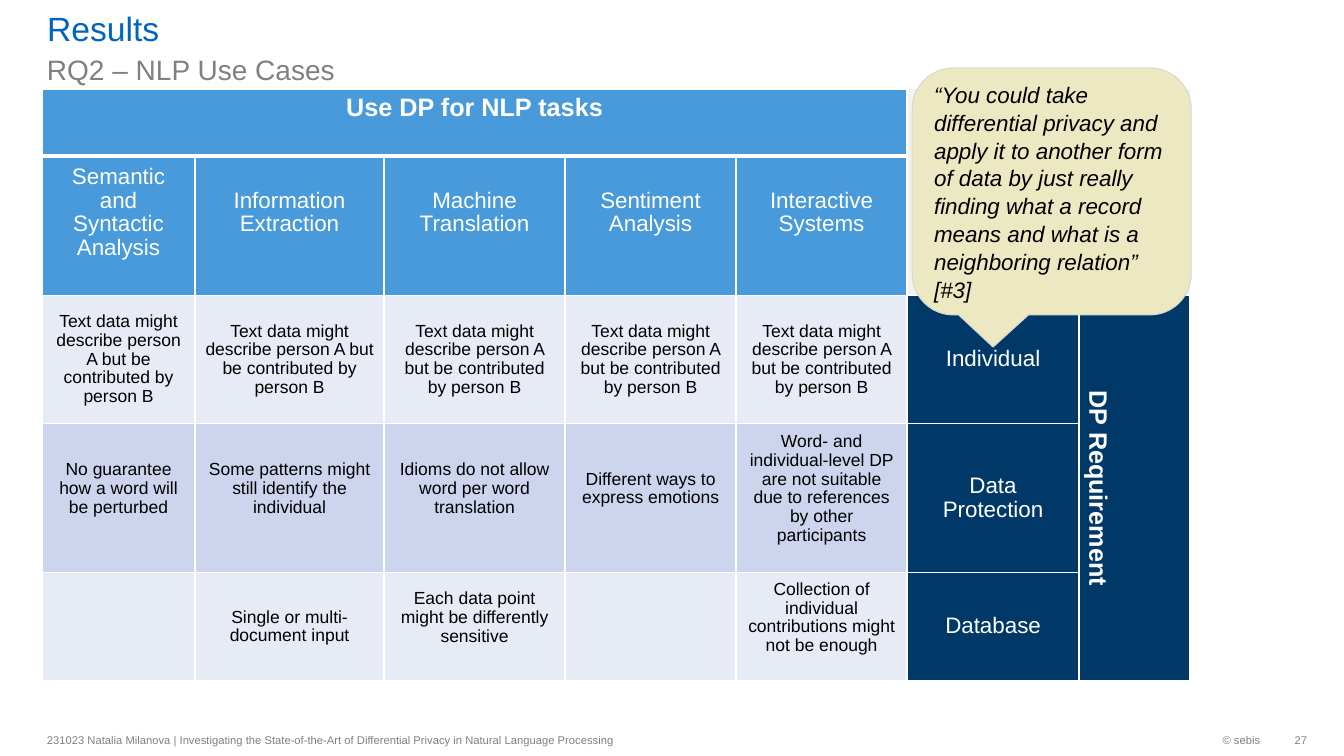
from lxml import etree
from pptx import Presentation
from pptx import util as u
from pptx.dml.color import RGBColor
from pptx.enum import shapes, text
from pptx.oxml.ns import qn

PX = 9071  # EMU per px
WHITE, BLACK, GREY = "FFFFFF", "000000", "808080"
BLUE, NAVY, PALE, LILAC, BLANK = "489ADA", "003968", "E7EBF6", "CCD5ED", "F2F2F2"
LEFT, MIDDLE, RIGHT = text.PP_ALIGN.LEFT, text.MSO_ANCHOR.MIDDLE, text.PP_ALIGN.RIGHT

TITLE = ("Results", (37, 9, 1167, 39))
# wording, box, size, alignment, anchor, right inset
LABELS = [
    ("RQ2 – NLP Use Cases", (37, 48, 1167, 43), 20, LEFT, text.MSO_ANCHOR.TOP, 10),
    ("231023 Natalia Milanova | Investigating the State-of-the-Art of Differential Privacy "
     "in Natural Language Processing", (37, 724, 635, 32), 8, LEFT, MIDDLE, 10),
    ("© sebis", (1034, 724, 236, 32), 8, RIGHT, MIDDLE, 10),
    ("27", (1270, 724, 37, 32), 8, RIGHT, MIDDLE, 0),
]
QUOTE = ("“You could take differential privacy and apply it to another form of data by just "
         "really finding what a record means and what is a neighboring relation” [#3]")
QUOTE_BOX = (912, 68, 279, 247)
QUOTE_TIP = (993, 347)

TABLE_CORNER = (42, 89)
COLUMNS = [153, 189, 181, 171, 171, 172, 111]
ROWS = [67, 134, 128, 147, 106]
ROW_FILLS = [BLUE, BLUE, PALE, LILAC, PALE]
TASKS = 5  # columns that hold tasks; the rest hold requirements
HEADERS = 2  # rows of headings
CONTRIBUTED = "Text data might describe person A but be contributed by person B"
CELLS = [
    ["Use DP for NLP tasks", "", "", "", "", "", ""],
    ["Semantic and Syntactic Analysis", "Information Extraction", "Machine Translation",
     "Sentiment Analysis", "Interactive Systems", "", ""],
    [CONTRIBUTED] * TASKS + ["Individual", "DP Requirement"],
    ["No guarantee how a word will be perturbed",
     "Some patterns might still identify the individual",
     "Idioms do not allow word per word translation", "Different ways to express emotions",
     "Word- and individual-level DP are not suitable due to references by other participants",
     "Data Protection", ""],
    ["", "Single or multi-\ndocument input", "Each data point might be differently sensitive", "",
     "Collection of individual contributions might not be enough", "Database", ""],
]
# extra space in px under the text of a cell
RAISED = {(0, 0): 28, (4, 2): 18, (4, 4): 18}
RAISED.update({(1, column): 26 for column in range(TASKS)})
RAISED.update({(3, column): 18 for column in range(TASKS)})


def px(*lengths):
    return [u.Emu(length * PX) for length in lengths]


def color(value):
    return RGBColor.from_string(value)


def style(paragraph, size, ink, align=LEFT, bold=False, italic=False):
    paragraph.alignment = align
    font = paragraph.font
    font.name, font.size, font.bold, font.italic = "Arial", u.Pt(size), bold, italic
    font.color.rgb = color(ink)


def fill(item, value):
    item.fill.solid()
    item.fill.fore_color.rgb = color(value)


def add_border(cell, side, points):
    """Draw a white line on one side (L, R, T or B); zero points means no line."""
    line = etree.SubElement(cell._tc.get_or_add_tcPr(), qn(f"a:ln{side}"), w=str(u.Pt(points)))
    if not points:
        etree.SubElement(line, qn("a:noFill"))
        return
    solid = etree.SubElement(line, qn("a:solidFill"))
    etree.SubElement(solid, qn("a:srgbClr"), val=WHITE)


def format_cell(cell, row, column):
    is_task, is_header = column < TASKS, row < HEADERS
    is_blank = is_header and not is_task
    for side in "LRTB":
        thick = row == 0 and side == "B" or row == 1 and side == "T"
        add_border(cell, side, 0 if is_blank else 3 if thick else 1)
    fill(cell, BLANK if is_blank else ROW_FILLS[row] if is_task else NAVY)
    cell.vertical_anchor = MIDDLE
    cell.margin_bottom = px(5 + RAISED.get((row, column), 0))[0]

    is_heading = (row, column) == (0, 0) or column == len(COLUMNS) - 1
    is_body = is_task and not is_header
    size = 18 if is_heading else 12.5 if is_body else 16
    cell.text = CELLS[row][column]
    for paragraph in cell.text_frame.paragraphs:
        style(paragraph, size, BLACK if is_body else WHITE, text.PP_ALIGN.CENTER, is_heading)
        paragraph.line_spacing = 0.96


def add_table(slide):
    frame = slide.shapes.add_table(len(ROWS), len(COLUMNS),
                                   *px(*TABLE_CORNER, sum(COLUMNS), sum(ROWS)))
    table = frame.table
    table.first_row = table.horz_banding = False
    for column, width in zip(table.columns, px(*COLUMNS)):
        column.width = width
    for row, height in zip(table.rows, px(*ROWS)):
        row.height = height
    for row in range(len(ROWS)):
        for column in range(len(COLUMNS)):
            format_cell(table.cell(row, column), row, column)
    table.cell(0, 0).merge(table.cell(0, TASKS - 1))
    requirement = table.cell(HEADERS, len(COLUMNS) - 1)
    requirement.merge(table.cell(len(ROWS) - 1, len(COLUMNS) - 1))
    requirement._tc.get_or_add_tcPr().set("vert", "vert")


def add_title(slide):
    wording, box = TITLE
    title = slide.shapes.title
    title.left, title.top, title.width, title.height = px(*box)
    frame = title.text_frame
    frame.text = wording
    frame.vertical_anchor = text.MSO_ANCHOR.BOTTOM
    frame.margin_top = frame.margin_bottom = 0
    style(frame.paragraphs[0], 24, "0065BD")


def add_label(slide, wording, box, size, align, anchor, inset):
    frame = slide.shapes.add_textbox(*px(*box)).text_frame
    frame.word_wrap = True
    frame.vertical_anchor = anchor
    frame.margin_right = px(inset)[0]
    frame.text = wording
    style(frame.paragraphs[0], size, GREY, align)


def add_quote(slide):
    left, top, width, height = QUOTE_BOX
    callout = slide.shapes.add_shape(shapes.MSO_SHAPE.ROUNDED_RECTANGULAR_CALLOUT,
                                     *px(*QUOTE_BOX))
    callout.adjustments[0] = round((QUOTE_TIP[0] - left) / width - 0.5, 2)
    callout.adjustments[1] = round((QUOTE_TIP[1] - top) / height - 0.5, 2)
    callout.shadow.inherit = False
    fill(callout, "ECE8C2")
    callout.line.color.rgb = color("DAD7CB")
    callout.line.width = u.Pt(0.75)
    frame = callout.text_frame
    frame.word_wrap = True
    frame.vertical_anchor = MIDDLE
    frame.text = QUOTE
    style(frame.paragraphs[0], 16, BLACK, italic=True)
    frame.paragraphs[0].line_spacing = 1.04


def main():
    presentation = Presentation()
    presentation.slide_width, presentation.slide_height = u.Inches(13.33), u.Inches(7.5)
    slide = presentation.slides.add_slide(presentation.slide_layouts[5])
    add_title(slide)
    for label in LABELS:
        add_label(slide, *label)
    add_table(slide)
    add_quote(slide)
    presentation.save("out.pptx")


if __name__ == "__main__":
    main()
